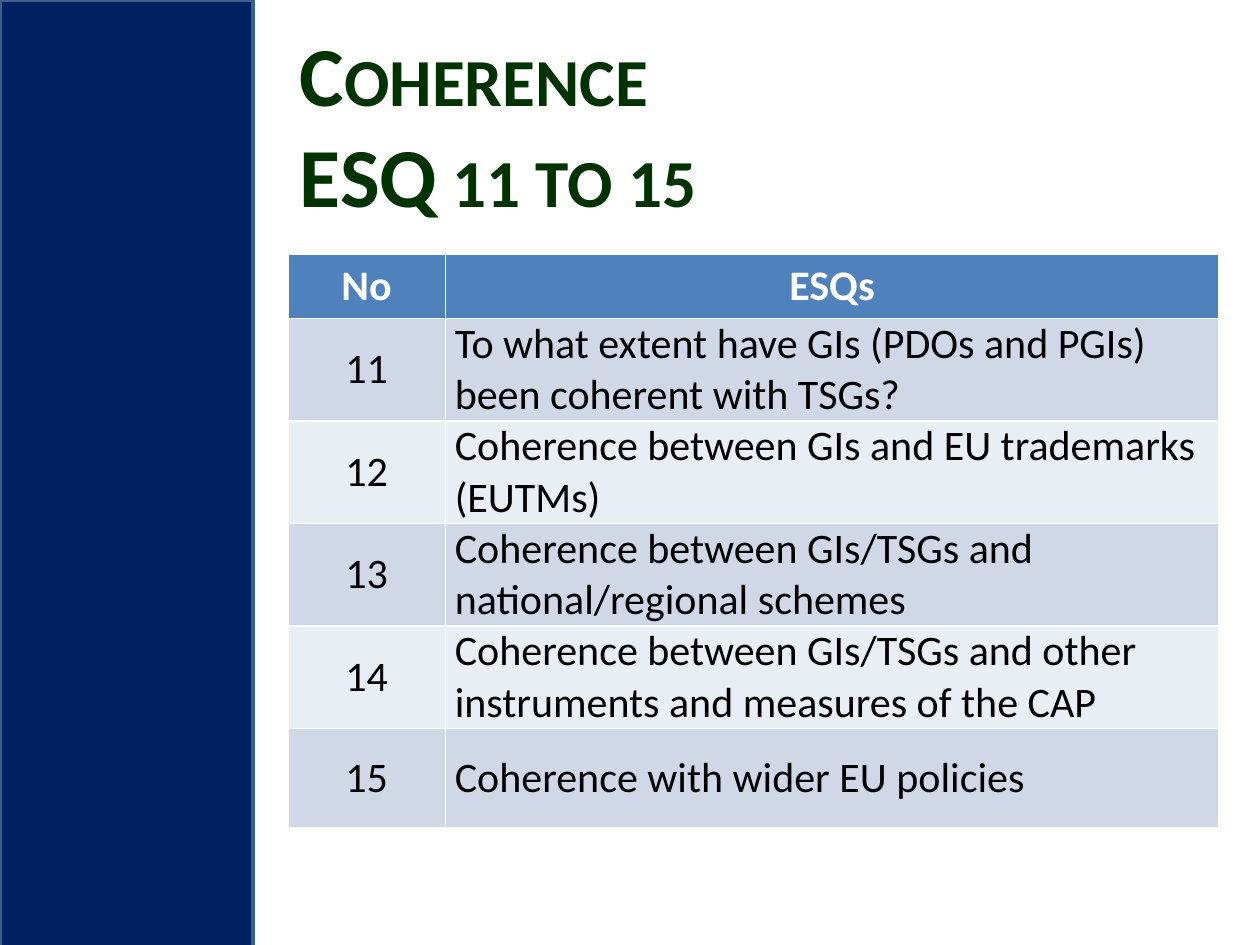
from pptx import Presentation
from pptx.dml.color import RGBColor
from pptx.enum.shapes import MSO_SHAPE
from pptx.enum.text import MSO_ANCHOR, MSO_AUTO_SIZE, PP_ALIGN
from pptx.util import Pt


def color(code):
    return RGBColor.from_string(code)


class Deck:
    """Hold the style and the current slide."""

    face = "Calibri"
    navy, edge, green = "002060", "3A5F8C", "003300"
    head, bands = "4F81BD", ("D0D8E8", "E9EDF4")

    def __init__(self):
        self.file = Presentation()
        self.file.slide_width, self.file.slide_height = Pt(720), Pt(540)
        self.slide = self.file.slides.add_slide(self.file.slide_layouts[5])

    def style(self, para, size, tone, bold=False):
        for run in para.runs:
            font = run.font
            font.name, font.size, font.bold = self.face, Pt(size), bold
            font.color.rgb = color(tone)

    def panel(self, *box):
        shape = self.slide.shapes.add_shape(MSO_SHAPE.RECTANGLE, *map(Pt, box))
        shape.shadow.inherit = False
        shape.fill.solid()
        shape.fill.fore_color.rgb = color(self.navy)
        shape.line.color.rgb = color(self.edge)
        shape.line.width = Pt(2)

    def title(self, text, *box):
        shape = self.slide.shapes.title
        shape.left, shape.top, shape.width, shape.height = map(Pt, box)
        frame = shape.text_frame
        frame.text = text
        frame.auto_size = MSO_AUTO_SIZE.NONE
        frame.vertical_anchor = MSO_ANCHOR.MIDDLE
        para = frame.paragraphs[0]
        para.alignment = PP_ALIGN.LEFT
        self.style(para, 48, self.green, True)
        for run in para.runs:
            run.font._element.set("cap", "small")

    def cell(self, cell, text, fill, top, mid):
        cell.fill.solid()
        cell.fill.fore_color.rgb = color(fill)
        cell.text = text
        para = cell.text_frame.paragraphs[0]
        para.alignment = PP_ALIGN.CENTER if mid else PP_ALIGN.LEFT
        self.style(para, 24, "FFFFFF" if top else "000000", top)
        if not top:
            cell.vertical_anchor = MSO_ANCHOR.MIDDLE
            cell.margin_left = cell.margin_right = Pt(5.4)
            cell.margin_top = cell.margin_bottom = 0

    def table(self, rows, left, top, wide, high):
        frame = self.slide.shapes.add_table(
            len(rows), len(wide), Pt(left), Pt(top), Pt(sum(wide)), Pt(sum(high)))
        grid = frame.table
        for col, width in zip(grid.columns, wide):
            col.width = Pt(width)
        for i, row in enumerate(rows):
            grid.rows[i].height = Pt(high[i])
            fill = self.bands[(i - 1) % 2] if i else self.head
            for j, text in enumerate(row):
                self.cell(grid.cell(i, j), text, fill, i == 0, i == 0 or j == 0)


def main():
    items = [
        "To what extent have GIs (PDOs and PGIs) been coherent with TSGs?",
        "Coherence between GIs and EU trademarks (EUTMs)",
        "Coherence between GIs/TSGs and national/regional schemes",
        "Coherence between GIs/TSGs and other instruments and measures of the CAP",
        "Coherence with wider EU policies",
    ]
    rows = [("No", "ESQs")] + [(str(n), text) for n, text in enumerate(items, 11)]
    deck = Deck()
    deck.panel(0, 0, 144.7, 541.4)
    deck.title("Coherence\vESQ 11 to 15", 164.2, 9.4, 529.2, 122.4)
    deck.table(rows, 164.5, 145.4, (90, 442), [36] + [58.5] * 4 + [57])
    deck.file.save("out.pptx")


if __name__ == "__main__":
    main()
